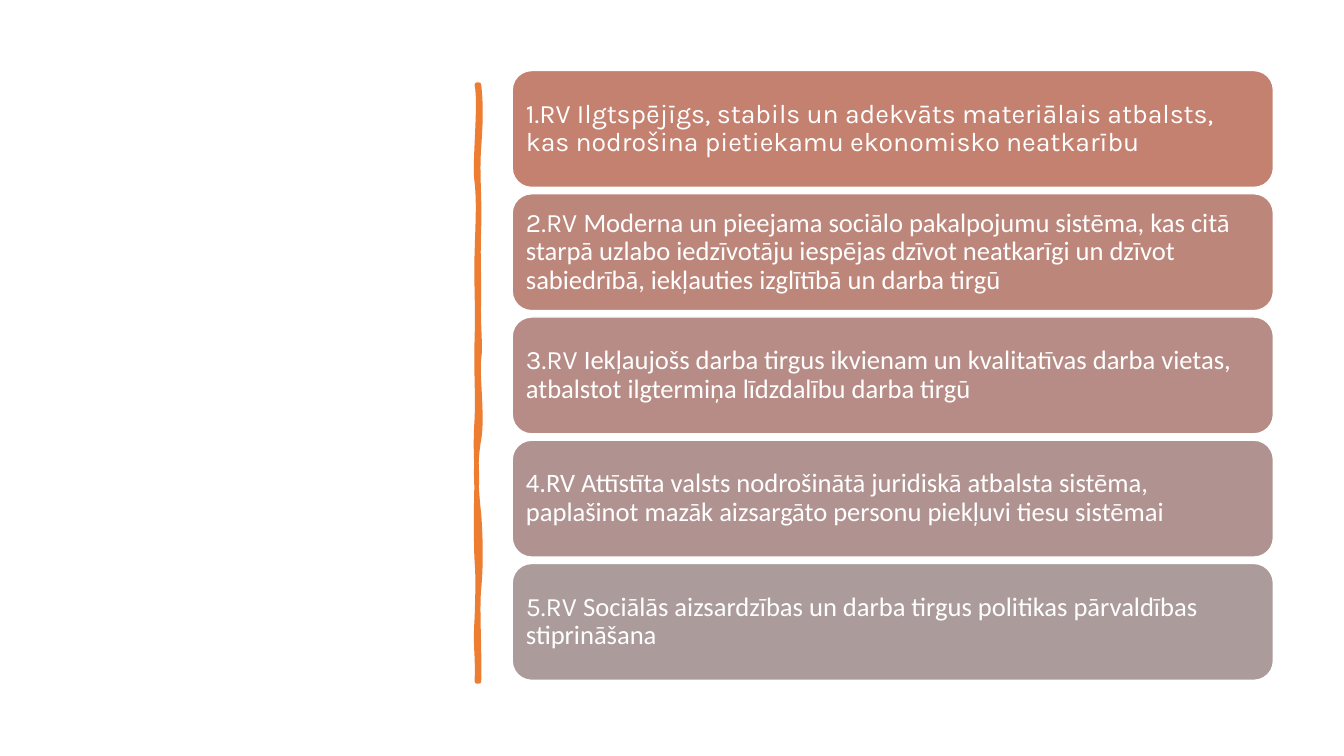
from dataclasses import dataclass

from lxml import etree
from pptx import Presentation
from pptx import util as u
from pptx.dml.color import RGBColor
from pptx.enum import shapes, text
from pptx.oxml.ns import qn

DIRECTIONS = [
    [("1.RV Ilgtspējīgs, stabils un adekvāts materiālais atbalsts, kas nodrošina "
      "pietiekamu ekonomisko neatkarību", "Karla")],
    [("2.RV ", "Karla"),
     ("Moderna un pieejama sociālo pakalpojumu sistēma, kas citā starpā uzlabo "
      "iedzīvotāju iespējas dzīvot neatkarīgi un dzīvot sabiedrībā, iekļauties "
      "izglītībā un darba tirgū", "Calibri")],
    [("3.RV ", "Karla"),
     ("Iekļaujošs darba tirgus ikvienam un kvalitatīvas darba vietas, atbalstot "
      "ilgtermiņa līdzdalību darba tirgū", "Calibri")],
    [("4.RV Attīstīta valsts nodrošinātā juridiskā atbalsta sistēma, paplašinot "
      "mazāk aizsargāto personu piekļuvi tiesu sistēmai", "Calibri")],
    [("5.RV ", "Karla"),
     ("Sociālās aizsardzības un darba tirgus politikas pārvaldības stiprināšana",
      "Calibri")],
]

STROKE_START = (4.75, 0.84)
STROKE_CURVES = [
    ((4.77, 1.02), (4.77, 1.19), (4.75, 1.46)),
    ((4.73, 1.73), (4.76, 1.95), (4.75, 2.26)),
    ((4.74, 2.57), (4.75, 2.62), (4.75, 2.94)),
    ((4.74, 3.25), (4.77, 3.42), (4.75, 3.56)),
    ((4.73, 3.7), (4.79, 4.14), (4.75, 4.36)),
    ((4.71, 4.57), (4.72, 4.84), (4.75, 5.1)),
    ((4.77, 5.36), (4.77, 5.64), (4.75, 5.84)),
    ((4.73, 6.03), (4.76, 6.5), (4.75, 6.76)),
    ((4.74, 6.76), (4.73, 6.76), (4.73, 6.76)),
    ((4.74, 6.46), (4.71, 6.44), (4.73, 6.13)),
    ((4.74, 5.83), (4.74, 5.7), (4.73, 5.57)),
    ((4.72, 5.44), (4.72, 4.95), (4.73, 4.77)),
    ((4.73, 4.59), (4.71, 4.45), (4.73, 4.15)),
    ((4.74, 3.86), (4.72, 3.73), (4.73, 3.35)),
    ((4.74, 2.98), (4.72, 2.81), (4.73, 2.5)),
    ((4.74, 2.18), (4.75, 2), (4.73, 1.81)),
    ((4.7, 1.63), (4.77, 1.04), (4.73, 0.84)),
]


@dataclass(frozen=True)
class Theme:
    cards: tuple = ("C48170", "BD867B", "B78C86", "B09391", "AB9C9B")
    accent: str = "ED7D31"
    white: str = "FFFFFF"
    body: float = 19
    stroke: float = 3.25
    border: float = 1


THEME = Theme()
WIDTH, HEIGHT = 13.33, 7.5
CARD_LEFT, CARD_TOP, CARD_WIDTH, CARD_HEIGHT = 5.08, 0.7, 7.55, 1.16
LAST_CARD_TOP = 5.59
CARD_PITCH = (LAST_CARD_TOP - CARD_TOP) / (len(DIRECTIONS) - 1)
INSET = 0.08


def paint(sp, fill, line, width):
    sp.shadow.inherit = False
    sp.fill.solid()
    sp.fill.fore_color.rgb = RGBColor.from_string(fill)
    sp.line.color.rgb = RGBColor.from_string(line)
    sp.line.width = u.Pt(width)


def bend(sp, curves):
    segments = list(sp._element.iter(qn("a:lnTo")))
    for segment, points in zip(segments, curves):
        segment.tag = qn("a:cubicBezTo")
        segment.remove(segment[0])
        for x, y in points:
            etree.SubElement(segment, qn("a:pt"),
                             x=str(u.Inches(x) - sp.left), y=str(u.Inches(y) - sp.top))


def add_stroke(s):
    x, y = (u.Inches(v) for v in STROKE_START)
    anchors = [(u.Inches(end[0]), u.Inches(end[1])) for _, _, end in STROKE_CURVES]
    builder = s.shapes.build_freeform(x, y)
    builder.add_line_segments(anchors, close=True)
    sp = builder.convert_to_shape()
    bend(sp, STROKE_CURVES)
    paint(sp, THEME.accent, THEME.accent, THEME.stroke)
    etree.SubElement(sp._element.spPr.find(qn("a:ln")), qn("a:round"))


def add_card(s, row, runs):
    sp = s.shapes.add_shape(
        shapes.MSO_SHAPE.ROUNDED_RECTANGLE,
        u.Inches(CARD_LEFT), u.Inches(CARD_TOP + row * CARD_PITCH),
        u.Inches(CARD_WIDTH), u.Inches(CARD_HEIGHT),
    )
    paint(sp, THEME.cards[row], THEME.white, THEME.border)
    tf = sp.text_frame
    tf.word_wrap = True
    tf.vertical_anchor = text.MSO_ANCHOR.MIDDLE
    tf.margin_left = tf.margin_right = tf.margin_top = tf.margin_bottom = u.Inches(INSET)
    p = tf.paragraphs[0]
    p.alignment = text.PP_ALIGN.LEFT
    p.line_spacing = 0.9
    for words, font in runs:
        r = p.add_run()
        r.text = words
        r.font.name = font
        r.font.size = u.Pt(THEME.body)
        r.font.color.rgb = RGBColor.from_string(THEME.white)


def main():
    prs = Presentation()
    prs.slide_width, prs.slide_height = u.Inches(WIDTH), u.Inches(HEIGHT)
    s = prs.slides.add_slide(prs.slide_layouts[6])
    add_stroke(s)
    for row, runs in enumerate(DIRECTIONS):
        add_card(s, row, runs)
    prs.save("out.pptx")


if __name__ == "__main__":
    main()
